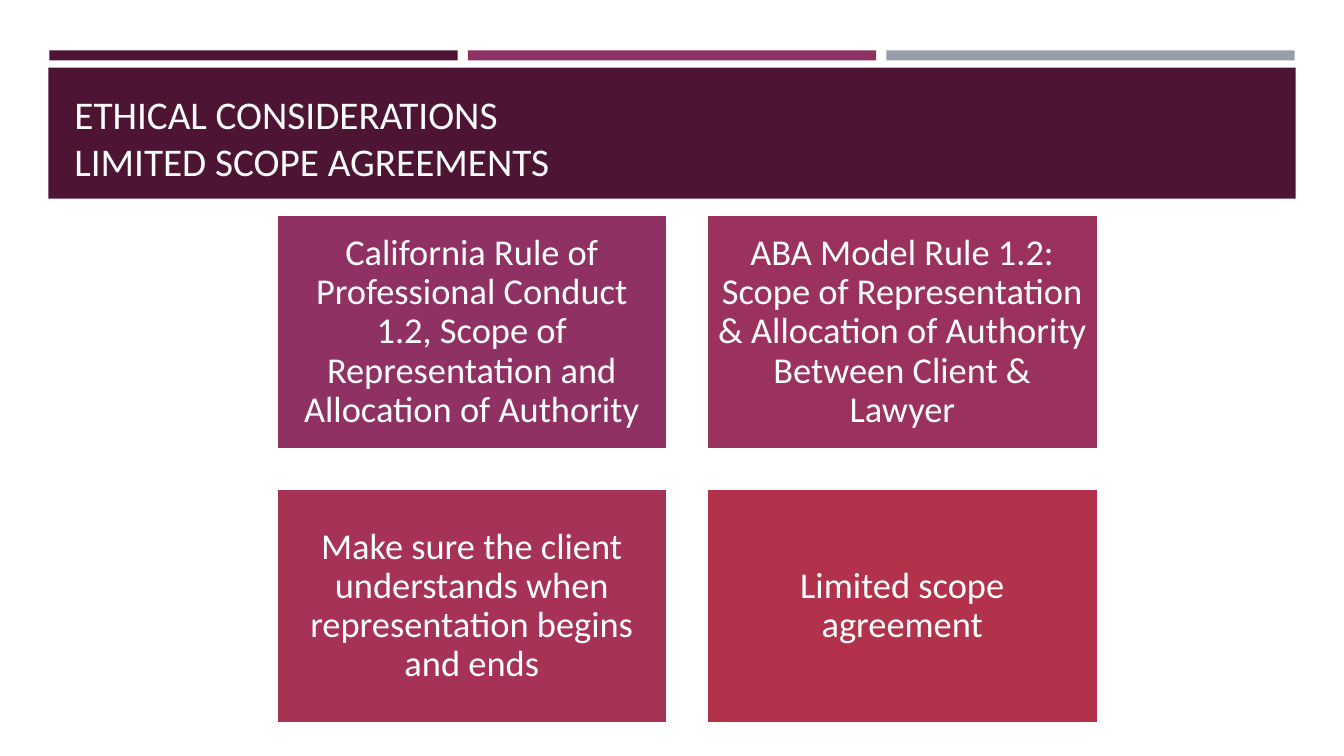
from pptx import Presentation
from pptx.dml.color import RGBColor
from pptx.enum.shapes import MSO_SHAPE
from pptx.enum.text import MSO_ANCHOR, PP_ALIGN
from pptx.util import Inches, Pt


def add_rect(left, top, width, height, color):
    rect = slide.shapes.add_shape(
        MSO_SHAPE.RECTANGLE,
        Inches(left), Inches(top), Inches(width), Inches(height))
    rect.shadow.inherit = False
    rect.fill.solid()
    rect.fill.fore_color.rgb = RGBColor.from_string(color)
    rect.line.fill.background()
    return rect


def style_text(frame, size, color):
    frame.word_wrap = True
    for para in frame.paragraphs:
        for run in para.runs:
            run.font.name = "Calibri"
            run.font.size = Pt(size)
            run.font.color.rgb = RGBColor.from_string(color)


deck = Presentation()
deck.slide_width = Inches(13.33)
deck.slide_height = Inches(7.5)
slide = deck.slides.add_slide(deck.slide_layouts[6])

# Stripes and title band
for col, color in enumerate(["4D1434", "903163", "969FA7"]):
    add_rect(0.49 + col * 4.15, 0.5, 4.05, 0.1, color)
add_rect(0.48, 0.67, 12.37, 1.3, "4D1434")

title = slide.shapes.add_textbox(
    Inches(0.64), Inches(0.77), Inches(12.06), Inches(1.11))
frame = title.text_frame
frame.text = "ETHICAL CONSIDERATIONS\vLIMITED SCOPE AGREEMENTS"
frame.vertical_anchor = MSO_ANCHOR.BOTTOM
style_text(frame, 28, "FFFEFF")

# Two by two grid of cards
cards = [
    ("California Rule of Professional Conduct 1.2, Scope of "
     "Representation and Allocation of Authority", "903163"),
    ("ABA Model Rule 1.2: Scope of Representation & Allocation of "
     "Authority Between Client & Lawyer", "9B325D"),
    ("Make sure the client understands when representation begins "
     "and ends", "A63256"),
    ("Limited scope agreement", "B2324B"),
]
for index, (text, color) in enumerate(cards):
    row, col = divmod(index, 2)
    card = add_rect(2.74 + col * 4.27, 2.13 + row * 2.72, 3.88, 2.33, color)
    card.line.color.rgb = RGBColor.from_string("FFFFFF")
    card.line.width = Pt(1.75)
    frame = card.text_frame
    frame.text = text
    frame.vertical_anchor = MSO_ANCHOR.MIDDLE
    frame.margin_left = frame.margin_right = Inches(0.11)
    frame.margin_top = frame.margin_bottom = Inches(0.11)
    frame.paragraphs[0].alignment = PP_ALIGN.CENTER
    frame.paragraphs[0].line_spacing = 0.9
    style_text(frame, 26, "FFFFFF")

deck.save("out.pptx")
